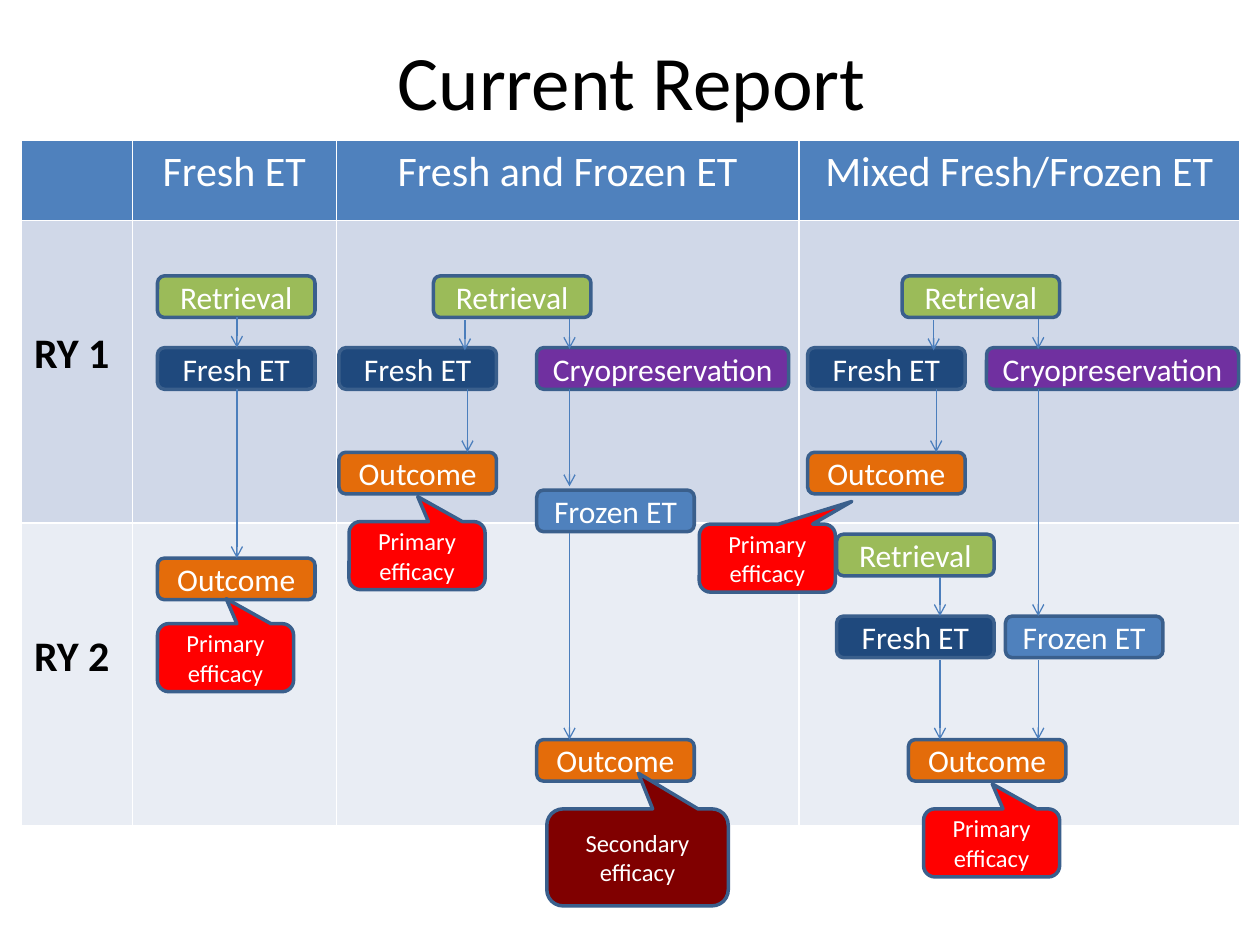
from lxml.etree import SubElement
from pptx import Presentation
from pptx.dml.color import RGBColor
from pptx.enum.shapes import MSO_CONNECTOR, MSO_SHAPE
from pptx.enum.text import MSO_ANCHOR, PP_ALIGN
from pptx.oxml.ns import qn
from pptx.util import Pt

PX = 9144
HUE = {
    "white": "FFFFFF", "black": "000000", "head": "4F81BD",
    "band": "D0D8E8", "pale": "E9EDF4", "edge": "3A5F8C", "arrow": "4B7EBC",
    "Retrieval": "9BBB59", "Fresh ET": "1F497D", "Frozen ET": "4F81BD",
    "Outcome": "E46C0A", "Cryopreservation": "7030A0",
    "Primary efficacy": "FF0000", "Secondary efficacy": "800000",
}
TITLE = "Current Report"
COLS = [88, 162, 367, 350]
ROWS = [64, 240, 240]
CELLS = [
    ["", "Fresh ET", "Fresh and Frozen ET", "Mixed Fresh/Frozen ET"],
    ["RY 1", "", "", ""],
    ["RY 2", "", "", ""],
]
STEPS = {
    "Retrieval": [(125, 219), (344, 219), (716, 219), (664, 424)],
    "Fresh ET": [(125, 276), (269, 276), (641, 276), (664, 489)],
    "Cryopreservation": [(426, 276), (783, 276)],
    "Frozen ET": [(426, 389), (798, 489)],
    "Outcome": [(125, 443), (269, 359), (426, 587), (641, 359), (721, 587)],
}
ARROWS = {
    188: [(252, 276), (309, 443)],
    369: [(254, 278)],
    371: [(309, 359)],
    452: [(253, 277), (309, 386), (423, 587)],
    741: [(254, 278)],
    743: [(309, 359)],
    746: [(458, 489), (524, 587)],
    824: [(253, 277), (309, 489), (524, 587)],
}
SIDE = ("Primary efficacy", 555, 416, 108, 54, (0.621, -0.833))
UP = (0.005, -0.867)
NOTES = [
    ("Primary efficacy", 125, 495, 108, 54, UP),
    ("Primary efficacy", 277, 414, 108, 54, UP),
    ("Secondary efficacy", 434, 642, 144, 77, UP),
    ("Primary efficacy", 733, 642, 108, 54, UP),
]


def px(*nums):
    return [n * PX for n in nums]


def rgb(name):
    return RGBColor.from_string(HUE[name])


def write(frame, text, size=18, hue="white", bold=False, align=PP_ALIGN.CENTER):
    para = frame.paragraphs[0]
    para.alignment = align
    run = para.add_run()
    run.text = text
    font = run.font
    font.name, font.size, font.bold = "Calibri", Pt(size), bold
    font.color.rgb = rgb(hue)


def block(kind, text, x, y, w, h, size=18, pad=0):
    shape = slide.shapes.add_shape(kind, *px(x, y, w, h))
    shape.shadow.inherit = False
    shape.fill.solid()
    shape.fill.fore_color.rgb = rgb(text)
    shape.line.color.rgb = rgb("edge")
    shape.line.width = Pt(2)
    frame = shape.text_frame
    frame.word_wrap = True
    frame.vertical_anchor = MSO_ANCHOR.MIDDLE
    frame.margin_left = frame.margin_right = pad * PX
    frame.margin_top = frame.margin_bottom = 0
    write(frame, text, size=size)
    return shape


def note(text, x, y, w, h, tip):
    shape = block(MSO_SHAPE.ROUNDED_RECTANGULAR_CALLOUT, text, x, y, w, h, size=14, pad=10)
    shape.adjustments[0], shape.adjustments[1] = tip


def arrow(x, top, end):
    line = slide.shapes.add_connector(MSO_CONNECTOR.STRAIGHT, *px(x, top, x, end))
    line.line.color.rgb = rgb("arrow")
    line.line.width = Pt(0.75)
    props = line._element.spPr
    SubElement(props.find(qn("a:ln")), qn("a:tailEnd"), type="arrow")
    SubElement(props, qn("a:effectLst"))


def border(cell):
    props = cell._tc.get_or_add_tcPr()
    for side in "LRTB":
        edge = SubElement(props, qn("a:ln" + side), w=str(Pt(1)))
        fill = SubElement(edge, qn("a:solidFill"))
        SubElement(fill, qn("a:srgbClr"), val=HUE["white"])


def grid():
    size = px(17, 111, sum(COLS), sum(ROWS))
    table = slide.shapes.add_table(len(ROWS), len(COLS), *size).table
    for col, wide in zip(table.columns, COLS):
        col.width = wide * PX
    for row, high, texts, hue in zip(table.rows, ROWS, CELLS, ["head", "band", "pale"]):
        row.height = high * PX
        for cell, text in zip(row.cells, texts):
            border(cell)
            cell.fill.solid()
            cell.fill.fore_color.rgb = rgb(hue)
            if text and hue == "head":
                write(cell.text_frame, text, size=24)
            elif text:
                cell.margin_top = 86 * PX
                write(cell.text_frame, text, size=24, hue="black", bold=True,
                      align=PP_ALIGN.LEFT)


deck = Presentation()
deck.slide_width, deck.slide_height = px(1000, 750)
slide = deck.slides.add_slide(deck.slide_layouts[6])

grid()
note(*SIDE)
for text, spots in STEPS.items():
    wide = 200 if text == "Cryopreservation" else 125
    for x, y in spots:
        block(MSO_SHAPE.ROUNDED_RECTANGLE, text, x, y, wide, 33)
for x, spans in ARROWS.items():
    for top, end in spans:
        arrow(x, top, end)
for item in NOTES:
    note(*item)

title = slide.shapes.add_textbox(*px(3, 17, 997, 92)).text_frame
title.word_wrap = True
title.vertical_anchor = MSO_ANCHOR.MIDDLE
write(title, TITLE, size=44, hue="black")

deck.save("out.pptx")
